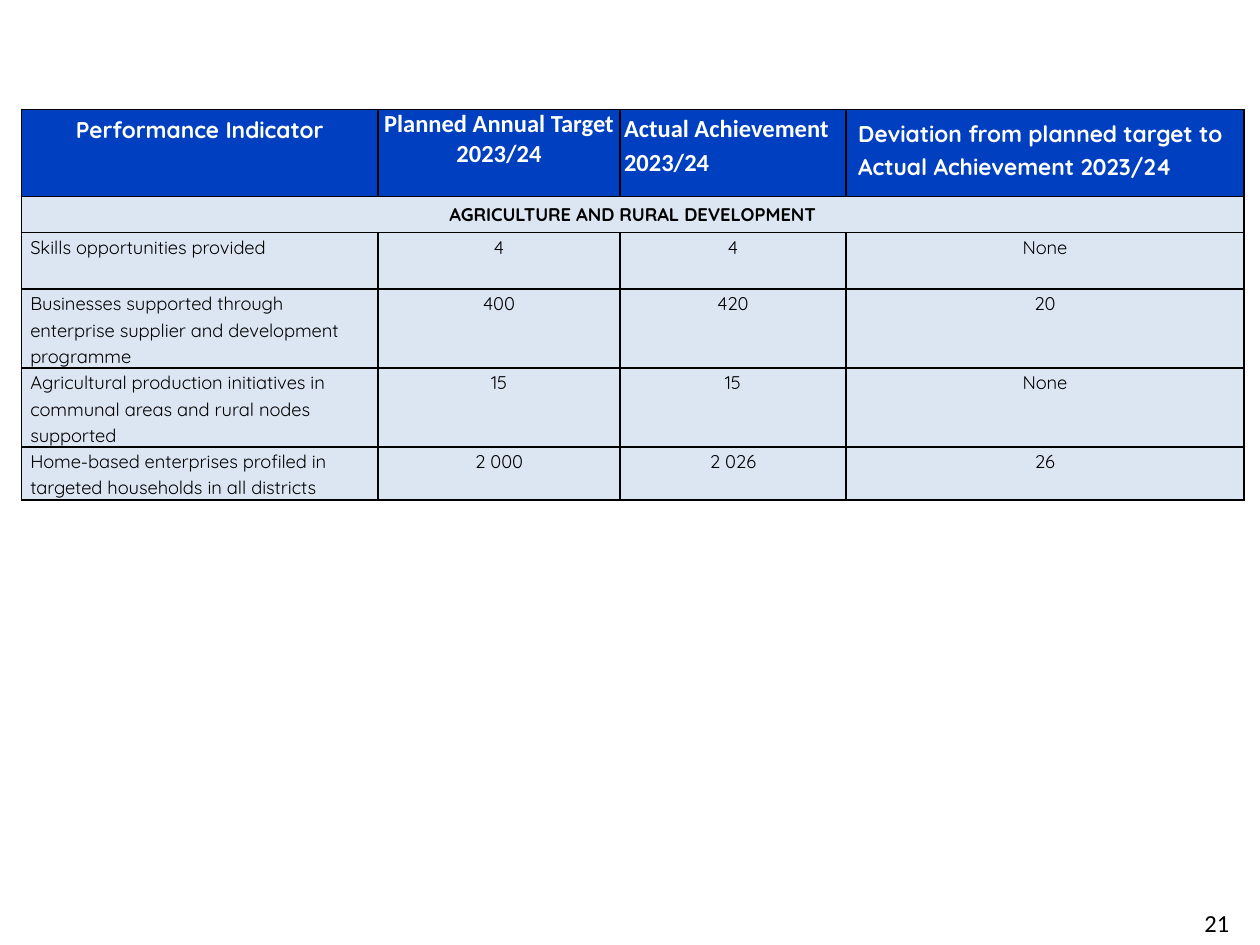
from dataclasses import dataclass
from itertools import product

from lxml.etree import SubElement
from pptx import Presentation
from pptx.dml.color import RGBColor
from pptx.enum.text import PP_ALIGN as Align
from pptx.oxml.ns import qn
from pptx.util import Cm, Pt


@dataclass(frozen=True)
class Theme:
    blue: str = "0040C0"
    pale: str = "DCE6F2"
    white: str = "FFFFFF"
    black: str = "000000"
    body_font: str = "Quicksand"
    plain_font: str = "Calibri"
    body_size: float = 10.5
    head_size: float = 13
    plain_size: float = 14
    border: float = 1


THEME = Theme()


@dataclass(frozen=True)
class Style:
    """Look of one table cell; margins are in centimetres."""
    fill: str = THEME.pale
    color: str = THEME.black
    font: str = THEME.body_font
    size: float = THEME.body_size
    bold: bool = False
    align: Align = Align.CENTER
    spacing: float = 1.15
    side: float = 0.18
    top: float = 0


@dataclass(frozen=True)
class Indicator:
    name: str
    target: str
    actual: str
    deviation: str


def header(font: str, size: float, align: Align, spacing: float,
           side: float, top: float) -> Style:
    return Style(THEME.blue, THEME.white, font, size, True,
                 align, spacing, side, top)


WIDE = (THEME.body_font, THEME.head_size)
TIGHT = (THEME.plain_font, THEME.plain_size)
HEADERS = [
    ("Performance Indicator", header(*WIDE, Align.CENTER, 1, 0.25, 0.13)),
    ("Planned Annual Target 2023/24", header(*TIGHT, Align.CENTER, 1, 0.08, 0)),
    ("Actual Achievement 2023/24", header(*TIGHT, Align.LEFT, 1.15, 0.08, 0)),
    ("Deviation from planned target to Actual Achievement 2023/24",
     header(*WIDE, Align.LEFT, 1.15, 0.25, 0.13)),
]
SECTION = Style(bold=True, spacing=1, side=0.25, top=0.13)
NAME = Style(align=Align.LEFT)
VALUE = Style()

INDICATORS = [
    Indicator("Skills opportunities provided", "4", "4", "None"),
    Indicator("Businesses supported through enterprise supplier and "
              "development programme", "400", "420", "20"),
    Indicator("Agricultural production initiatives in communal areas and "
              "rural nodes supported", "15", "15", "None"),
    Indicator("Home-based enterprises profiled in targeted households in "
              "all districts", "2 000", "2 026", "26"),
]
COLUMN_WIDTHS = [7.19, 4.88, 4.55, 8.03]
ROW_HEIGHTS = [1.75, 0.73, 1.14, 1.59, 1.59, 1.07]


def apply_format(target, values: dict) -> None:
    for name, value in values.items():
        setattr(target, name, value)


def write_text(para, text: str, font: str, size: float, color: str,
               bold: bool = False) -> None:
    span = para.add_run()
    span.text = text
    apply_format(span.font, {"name": font, "size": Pt(size), "bold": bold})
    span.font.color.rgb = RGBColor.from_string(color)


def draw_borders(cell) -> None:
    properties = cell._tc.get_or_add_tcPr()
    for index, side in enumerate(("lnL", "lnR", "lnT", "lnB")):
        line = SubElement(properties, qn(f"a:{side}"), w=str(Pt(THEME.border)))
        paint = SubElement(line, qn("a:solidFill"))
        SubElement(paint, qn("a:srgbClr"), val=THEME.black)
        properties.insert(index, line)  # borders come before the fill


def fill_cell(cell, text: str, style: Style) -> None:
    apply_format(cell, {
        "margin_left": Cm(style.side), "margin_right": Cm(style.side),
        "margin_top": Cm(style.top), "margin_bottom": Cm(style.top),
    })
    para = cell.text_frame.paragraphs[0]
    apply_format(para, {"alignment": style.align, "line_spacing": style.spacing})
    write_text(para, text, style.font, style.size, style.color, style.bold)
    cell.fill.solid()
    cell.fill.fore_color.rgb = RGBColor.from_string(style.fill)


def add_indicator_table(page) -> None:
    rows, columns = len(ROW_HEIGHTS), len(COLUMN_WIDTHS)
    table = page.shapes.add_table(
        rows, columns, Cm(0.43), Cm(2.21),
        Cm(sum(COLUMN_WIDTHS)), Cm(sum(ROW_HEIGHTS))).table
    for column, width in zip(table.columns, COLUMN_WIDTHS):
        column.width = Cm(width)
    for row, height in zip(table.rows, ROW_HEIGHTS):
        row.height = Cm(height)

    # Header row and merged section row
    for column, (text, style) in enumerate(HEADERS):
        fill_cell(table.cell(0, column), text, style)
    section = table.cell(1, 0)
    section.merge(table.cell(1, columns - 1))
    fill_cell(section, "AGRICULTURE AND RURAL DEVELOPMENT", SECTION)

    # Indicator rows
    for row, item in enumerate(INDICATORS, start=2):
        fill_cell(table.cell(row, 0), item.name, NAME)
        values = (item.target, item.actual, item.deviation)
        for column, text in enumerate(values, start=1):
            fill_cell(table.cell(row, column), text, VALUE)

    for row, column in product(range(rows), range(columns)):
        draw_borders(table.cell(row, column))


def add_page_number(page, number: str) -> None:
    box = page.shapes.add_textbox(Cm(24.03), Cm(18.19), Cm(1.27), Cm(1.02))
    box.text_frame.word_wrap = True
    write_text(box.text_frame.paragraphs[0], number, THEME.plain_font,
               THEME.plain_size, THEME.black)


def main() -> None:
    deck = Presentation()
    apply_format(deck, {"slide_width": Cm(25.4), "slide_height": Cm(19.05)})
    page = deck.slides.add_slide(deck.slide_layouts[6])
    add_indicator_table(page)
    add_page_number(page, "21")
    deck.save("out.pptx")


if __name__ == "__main__":
    main()
